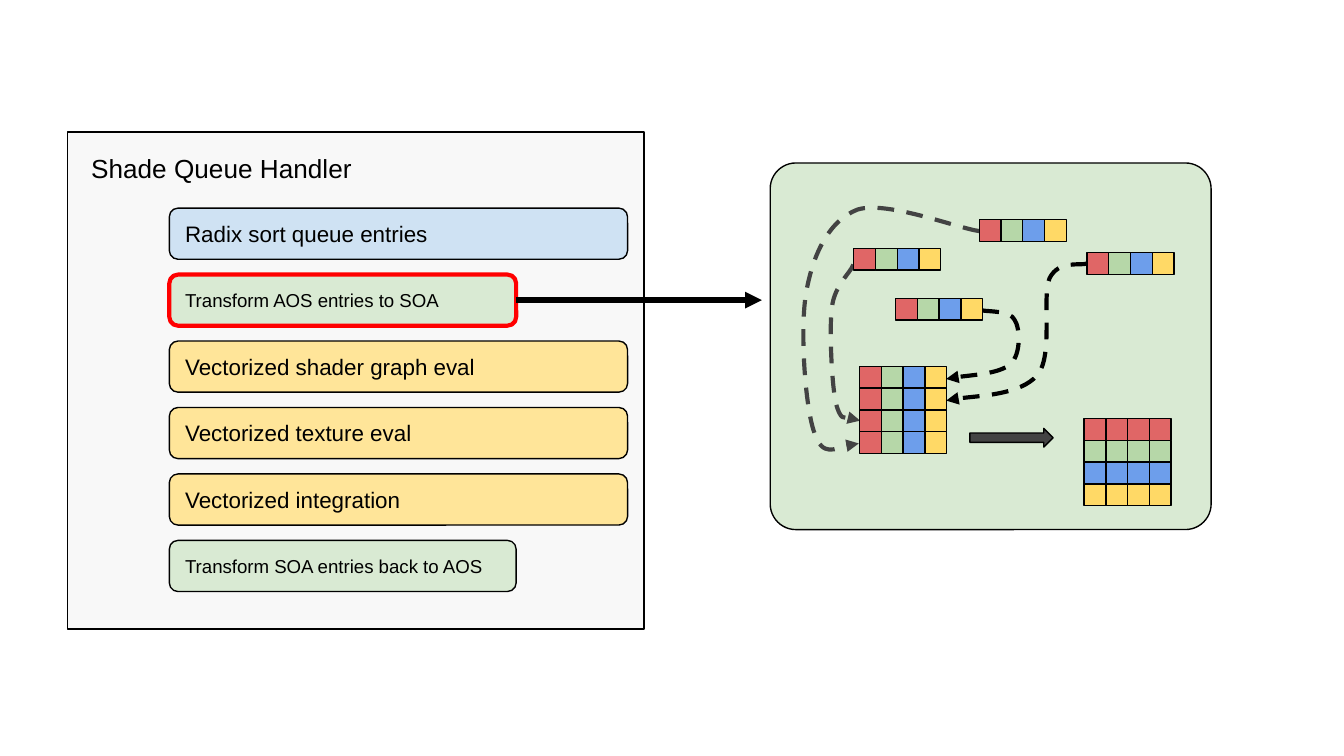
from dataclasses import dataclass

from lxml import etree
from pptx import Presentation
from pptx.dml.color import RGBColor
from pptx.enum import dml, shapes, text
from pptx.oxml.ns import qn
from pptx.util import Pt


@dataclass(frozen=True)
class Theme:
    font: str = "Arial"
    title_size: float = 14
    step_size: float = 12
    small_step_size: float = 10
    ink: str = "000000"
    grey: str = "434343"
    highlight: str = "FF0000"
    panel: str = "F8F8F8"
    sort: str = "CFE2F3"
    transform: str = "D9EAD3"
    vector: str = "FFE599"
    fields: tuple = ("E06666", "B6D7A8", "6D9EEB", "FFD966")
    thin: float = 0.75
    medium: float = 2.25
    thick: float = 3
    inset: float = 7.2


class Diagram:
    """Draws on one slide in one theme; all lengths are in points."""

    def __init__(self, slide, theme):
        self.slide = slide
        self.theme = theme

    def stroke(self, item, color, width):
        item.line.color.rgb = RGBColor.from_string(color)
        item.line.width = Pt(width)

    def arrowhead(self, item):
        ln = item._element.spPr.find(qn("a:ln"))
        etree.SubElement(ln, qn("a:tailEnd"), type="triangle")

    def label(self, item, words, size, anchor):
        frame = item.text_frame
        frame.word_wrap = True
        frame.auto_size = text.MSO_AUTO_SIZE.NONE
        frame.vertical_anchor = anchor
        frame.margin_left = frame.margin_right = Pt(self.theme.inset)
        frame.margin_top = frame.margin_bottom = Pt(self.theme.inset)
        paragraph = frame.paragraphs[0]
        paragraph.alignment = text.PP_ALIGN.LEFT
        run = paragraph.add_run()
        run.text = words
        run.font.name = self.theme.font
        run.font.size = Pt(size)
        run.font.color.rgb = RGBColor.from_string(self.theme.ink)

    def box(self, kind, left, top, width, height, fill, line=None,
            weight=None, corner=None):
        item = self.slide.shapes.add_shape(
            kind, Pt(left), Pt(top), Pt(width), Pt(height))
        item.shadow.inherit = False
        item.fill.solid()
        item.fill.fore_color.rgb = RGBColor.from_string(fill)
        self.stroke(item, line or self.theme.ink, weight or self.theme.thin)
        if corner is not None:
            item.adjustments[0] = corner
        return item

    def title(self, words, left, top, width, height):
        heading = self.slide.shapes.title
        heading.left, heading.top = Pt(left), Pt(top)
        heading.width, heading.height = Pt(width), Pt(height)
        self.label(heading, words, self.theme.title_size, text.MSO_ANCHOR.TOP)
        # Bring the heading in front of the panel
        self.slide.shapes._spTree.append(heading._element)

    def cells(self, left, top, rows):
        for r, row in enumerate(rows):
            for c, color in enumerate(row):
                self.box(shapes.MSO_SHAPE.RECTANGLE, left + c * CELL,
                         top + r * CELL, CELL, CELL, color)

    def curve(self, color, start, *controls):
        """Dashed Bézier arrow; every three points make one segment."""
        builder = self.slide.shapes.build_freeform(
            Pt(start[0]), Pt(start[1]), scale=1.0)
        builder.add_line_segments(
            [(Pt(x), Pt(y)) for x, y in controls], close=False)
        item = builder.convert_to_shape()
        item.shadow.inherit = False
        item.fill.background()
        self.stroke(item, color, self.theme.medium)
        item.line.dash_style = dml.MSO_LINE.DASH
        self.arrowhead(item)
        segments = list(item._element.iter(qn("a:lnTo")))
        for i in range(0, len(segments), 3):
            bezier = etree.Element(qn("a:cubicBezTo"))
            segments[i].addprevious(bezier)
            for segment in segments[i:i + 3]:
                bezier.append(segment[0])
                segment.getparent().remove(segment)

    def arrow(self, x1, y1, x2, y2):
        item = self.slide.shapes.add_connector(
            shapes.MSO_CONNECTOR.STRAIGHT, Pt(x1), Pt(y1), Pt(x2), Pt(y2))
        self.stroke(item, self.theme.ink, self.theme.thick)
        self.arrowhead(item)
        etree.SubElement(item._element.spPr, qn("a:effectLst"))


CELL = 11.66
STEP_LEFT, STEP_TOP, STEP_PITCH, STEP_HEIGHT = 90.7, 111.5, 35.6, 27.4
WIDE, NARROW = 245.5, 185.8


def main():
    deck = Presentation()
    deck.slide_width, deck.slide_height = Pt(720), Pt(405)
    theme = Theme()
    diagram = Diagram(deck.slides.add_slide(deck.slide_layouts[5]), theme)
    rounded = shapes.MSO_SHAPE.ROUNDED_RECTANGLE

    # Panels
    diagram.box(rounded, 412.6, 87.3, 236.2, 196.4, theme.transform,
                corner=0.07)
    diagram.box(shapes.MSO_SHAPE.RECTANGLE, 36, 70.7, 309, 266.4, theme.panel)
    diagram.title("Shade Queue Handler", 41.6, 74.2, 211.7, 29.5)

    # Steps of the queue handler
    steps = [
        ("Radix sort queue entries", theme.sort),
        ("Transform AOS entries to SOA", theme.transform),
        ("Vectorized shader graph eval", theme.vector),
        ("Vectorized texture eval", theme.vector),
        ("Vectorized integration", theme.vector),
        ("Transform SOA entries back to AOS", theme.transform),
    ]
    highlighted = 1
    for i, (words, fill) in enumerate(steps):
        small = fill == theme.transform
        line, weight = ((theme.highlight, theme.medium) if i == highlighted
                        else (theme.ink, theme.thin))
        step = diagram.box(rounded, STEP_LEFT, STEP_TOP + i * STEP_PITCH,
                           NARROW if small else WIDE, STEP_HEIGHT, fill,
                           line, weight, corner=0.17)
        diagram.label(step, words,
                      theme.small_step_size if small else theme.step_size,
                      text.MSO_ANCHOR.MIDDLE)

    # Paths that gather the scattered entries
    diagram.curve(theme.grey, (524.6, 123.8),
                  (513.4, 122.4), (475.2, 107.3), (459.4, 112.3),
                  (444.2, 118.1), (435.6, 136.1), (432, 156.2),
                  (428.4, 175.7), (431.3, 218.2), (436.3, 231.8),
                  (440.6, 245.5), (456.5, 236.9), (460.1, 237.6))
    diagram.curve(theme.grey, (457.2, 141.8),
                  (455.8, 146.2), (447.1, 152.6), (445.7, 164.9),
                  (444.2, 177.1), (445.7, 205.9), (447.8, 216),
                  (450.7, 226.1), (458.6, 223.9), (460.8, 225.4))
    diagram.curve(theme.ink, (526.3, 166.3),
                  (529.2, 167), (541.4, 166.3), (543.6, 171.4),
                  (546.5, 175.7), (547.2, 189.4), (541.4, 195.1),
                  (535, 200.2), (512.6, 201.6), (506.9, 203))
    diagram.curve(theme.ink, (582.5, 141.1),
                  (578.9, 142.6), (567.4, 139), (562.3, 149),
                  (558, 159.1), (564.5, 190.1), (555.8, 200.9),
                  (546.5, 211.7), (514.8, 212.4), (506.9, 214.6))

    # Scattered entries, gathered array, transposed array
    entry = theme.fields
    for left, top in [(524.6, 117.6), (457.4, 133), (479.8, 159.8),
                      (582.3, 135.3)]:
        diagram.cells(left, top, [entry])
    gathered = [entry] * 4
    diagram.cells(460.5, 196.3, gathered)
    diagram.cells(580.8, 224.3, zip(*gathered))
    diagram.box(shapes.MSO_SHAPE.RIGHT_ARROW, 519.6, 229.5, 44.6, 10,
                theme.grey)

    # Link from the highlighted step to its detail
    link_y = STEP_TOP + highlighted * STEP_PITCH + STEP_HEIGHT / 2
    diagram.arrow(STEP_LEFT + NARROW, link_y, 408.2, link_y)

    deck.save("out.pptx")


if __name__ == "__main__":
    main()
